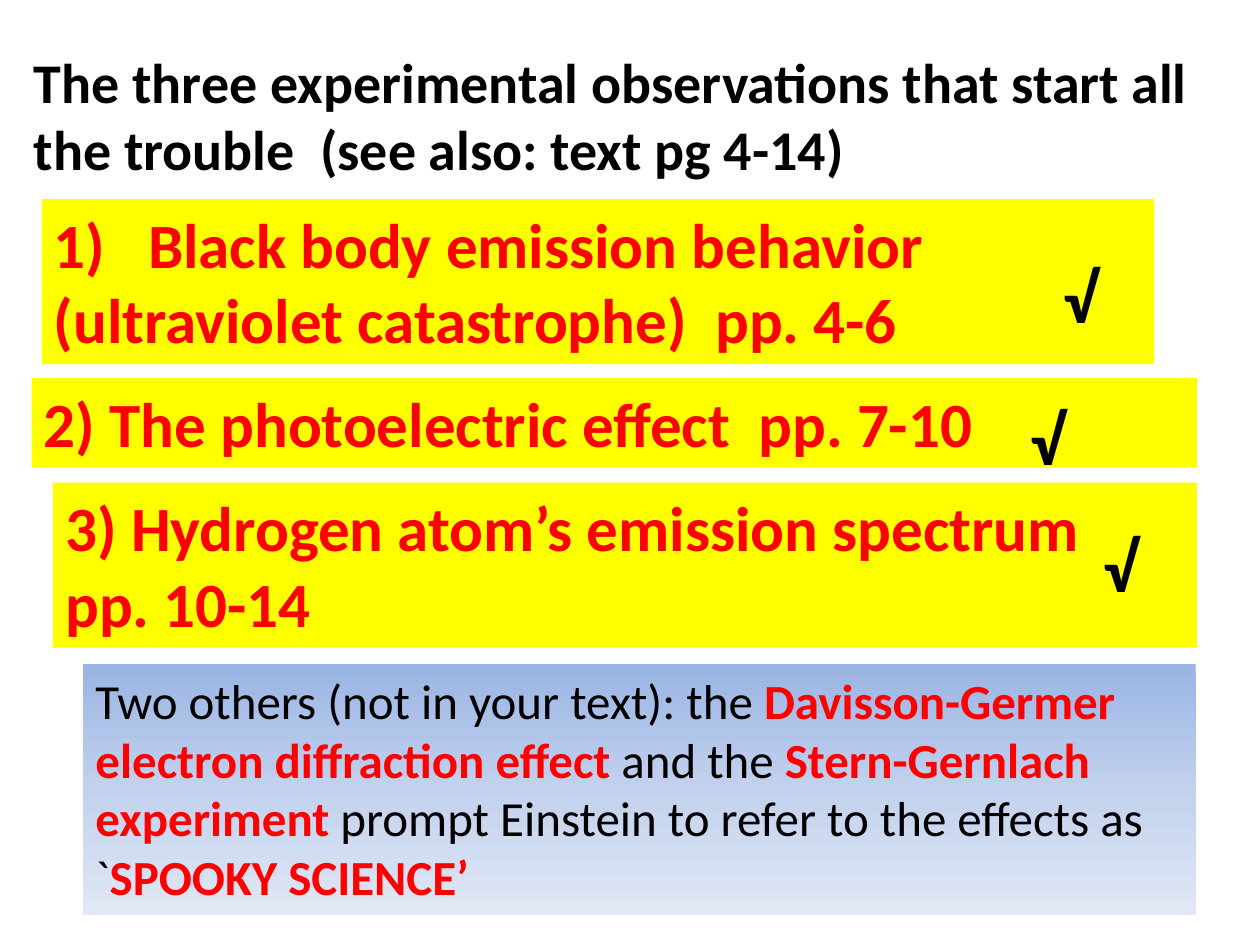
from copy import deepcopy

from pptx import Presentation
from pptx import util as u
from pptx.dml.color import RGBColor
from pptx.enum import shapes, text
from pptx.oxml.ns import qn

BLACK, RED, YELLOW = "000000", "FF0000", "FFFF00"
BLUES = ["9AB5E4", "C2D1ED", "E1E8F5"]


def color(hex_value):
    return RGBColor.from_string(hex_value)


class SlideBuilder:
    font = "Calibri"

    def __init__(self, slide):
        self.slide = slide

    def _write(self, shape, paragraphs, size, ink, bold, wrap=True):
        """Fill the frame; a paragraph is a list of (words, emphasised) runs."""
        frame = shape.text_frame
        frame.word_wrap = wrap
        frame.auto_size = text.MSO_AUTO_SIZE.SHAPE_TO_FIT_TEXT
        frame.vertical_anchor = text.MSO_ANCHOR.TOP
        for i, runs in enumerate(paragraphs):
            paragraph = frame.add_paragraph() if i else frame.paragraphs[0]
            paragraph.alignment = text.PP_ALIGN.LEFT
            paragraph.font.name = self.font
            paragraph.font.size = u.Pt(size)
            paragraph.font.bold = bold
            paragraph.font.color.rgb = color(ink)
            for words, emphasised in runs:
                run = paragraph.add_run()
                run.text = words
                # Runs state their colour so it wins over the shape style
                run.font.color.rgb = color(RED if emphasised else ink)
                if emphasised:
                    run.font.bold = True

    def label(self, box, words, size, wrap=True):
        shape = self.slide.shapes.add_textbox(*map(u.Inches, box))
        self._write(shape, [[(words, False)]], size, BLACK, True, wrap)

    def _panel(self, box):
        shape = self.slide.shapes.add_shape(
            shapes.MSO_SHAPE.RECTANGLE, *map(u.Inches, box))
        shape.shadow.inherit = False
        shape.line.fill.background()
        return shape

    def observation(self, box, lines):
        shape = self._panel(box)
        shape.fill.solid()
        shape.fill.fore_color.rgb = color(YELLOW)
        self._write(shape, [[(line, False)] for line in lines], 36, RED, True)

    def gradient_note(self, box, runs, shades):
        shape = self._panel(box)
        shape.fill.gradient()
        shape.fill.gradient_angle = 270
        # The default gradient has two stops; add the others
        stop_list = shape.element.spPr.find(".//" + qn("a:gsLst"))
        while len(stop_list) < len(shades):
            stop_list.append(deepcopy(stop_list[0]))
        for i, (stop, shade) in enumerate(zip(shape.fill.gradient_stops, shades)):
            stop.color.rgb = color(shade)
            stop.position = i / (len(shades) - 1)
        self._write(shape, [runs], 28, BLACK, False)

    def check_mark(self, left, top):
        self.label((left, top, 0.51, 0.77), "√", 40, wrap=False)


def main():
    deck = Presentation()
    deck.slide_width, deck.slide_height = u.Inches(10), u.Inches(7.5)
    builder = SlideBuilder(deck.slides.add_slide(deck.slide_layouts[6]))

    # Heading
    builder.label(
        (0.17, 0.33, 9.5, 1.18),
        "The three experimental observations that start all the trouble  "
        "(see also: text pg 4-14)", 32)

    # The three observations
    observations = [
        ((0.33, 1.58, 8.83, 1.31),
         ["1)   Black body emission behavior (ultraviolet catastrophe)  pp. 4-6"]),
        ((0.25, 3, 9.25, 0.71), ["2) The photoelectric effect  pp. 7-10"]),
        ((0.42, 3.83, 9.08, 1.31),
         ["3) Hydrogen atom’s emission spectrum", "pp. 10-14"]),
    ]
    for box, lines in observations:
        builder.observation(box, lines)

    # Further experiments
    builder.gradient_note((0.66, 5.27, 8.83, 1.99), [
        ("Two others (not in your text): the ", False),
        ("Davisson-Germer electron diffraction effect ", True),
        ("and the ", False),
        ("Stern-Gernlach experiment", True),
        (" prompt Einstein to refer to the effects as `", False),
        ("SPOOKY SCIENCE’", True),
    ], BLUES)

    # Check marks beside the observations
    for left, top in [(8.34, 1.96), (8.08, 3.09), (8.66, 4.1)]:
        builder.check_mark(left, top)

    deck.save("out.pptx")


if __name__ == "__main__":
    main()
